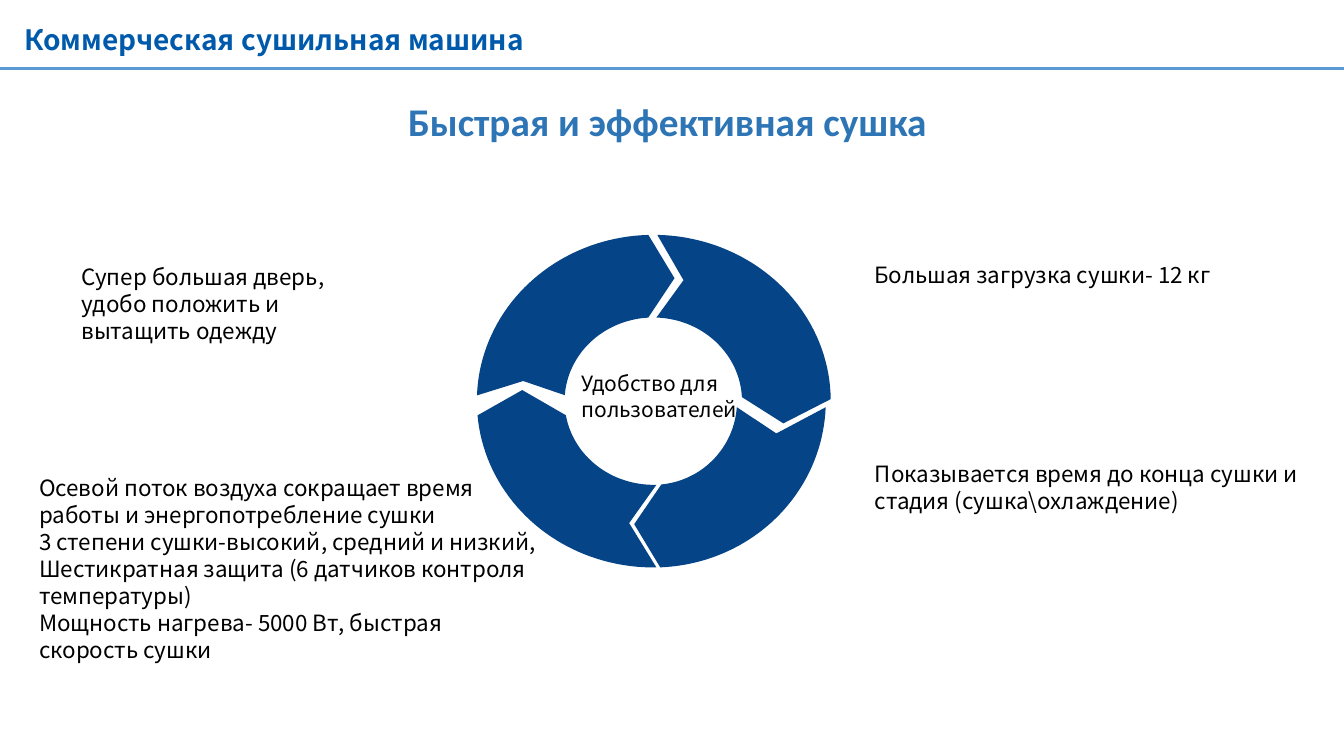
"""Build the slide on fast and efficient drying with its four-part ring."""
from math import cos, radians, sin

from lxml import etree
from pptx import Presentation
from pptx.dml.color import RGBColor
from pptx.enum.shapes import MSO_CONNECTOR as Connector
from pptx.enum.text import MSO_ANCHOR as Anchor
from pptx.oxml.ns import qn
from pptx.util import Inches, Pt

THEME = {
    "body_font": "Noto Sans CJK SC", "headline_font": "Calibri",
    "ink": "000000", "title": "005AAB", "headline": "2E75B6",
    "rule": "5B9BD5", "ring": "054487",
    "title_size": 20, "headline_size": 28, "body_size": 16, "hub_size": 15,
}

TITLE = "Коммерческая сушильная машина"
HEADLINE = "Быстрая и эффективная сушка"
HUB = "Удобство для пользователей"
BENEFITS = [
    ((8.57, 2.06, 4.21, 1.32), ["Большая загрузка сушки- 12 кг"]),
    ((0.29, 4.53, 5.2, 2.22), [
        "Осевой поток воздуха сокращает время работы и энергопотребление сушки",
        "3 степени сушки-высокий, средний и низкий,",
        "Шестикратная защита (6 датчиков контроля температуры)",
        "Мощность нагрева- 5000 Вт, быстрая скорость сушки",
    ]),
    ((0.71, 2.35, 3.24, 1.32),
     ["Супер большая дверь, удобо положить и вытащить одежду"]),
    ((8.58, 4.17, 4.73, 1.32),
     ["Показывается время до конца сушки и стадия (сушка\\охлаждение)"]),
]

RING_CENTRE = (6.48, 3.98)
OUTER_HEIGHT, INNER_HEIGHT = 1.65, 0.83
ARC_STEPS = 40
SEGMENTS = [
    {"radii": (1.76, 0.88), "outer": (-88.7, -0.7), "tip": (7.77, 4.2),
     "inner": (-2.8, -88), "notch": (6.78, 2.78)},
    {"radii": (1.75, 0.88), "outer": (182, 268.4), "tip": (6.69, 2.76),
     "inner": (266.7, 184.1), "notch": (5.19, 3.78)},
    {"radii": (1.75, 0.88), "outer": (89, 175.1), "tip": (5.18, 3.87),
     "inner": (170.3, 88), "notch": (6.24, 5.19)},
    {"radii": (1.71, 0.83), "outer": (2.1, 87.7), "tip": (6.29, 5.2),
     "inner": (84.5, 4.1), "notch": (7.7, 4.3)},
]


def color(part):
    return RGBColor.from_string(THEME[part])


def arc(width, height, span):
    start, end = span
    angles = [radians(start + (end - start) * step / ARC_STEPS)
              for step in range(ARC_STEPS + 1)]
    centre_x, centre_y = RING_CENTRE
    return [(centre_x + width * cos(a), centre_y + height * sin(a)) for a in angles]


def add_segment(ring, segment):
    outer_width, inner_width = segment["radii"]
    outline = (arc(outer_width, OUTER_HEIGHT, segment["outer"]) + [segment["tip"]]
               + arc(inner_width, INNER_HEIGHT, segment["inner"]) + [segment["notch"]])
    corners = [(Inches(x), Inches(y)) for x, y in outline]
    builder = ring.shapes.build_freeform(*corners[0])
    builder.add_line_segments(corners[1:], close=True)
    arrow = builder.convert_to_shape()
    arrow.shadow.inherit = False
    arrow.fill.solid()
    arrow.fill.fore_color.rgb = color("ring")
    arrow.line.fill.background()


def add_text(slide, place, lines, size, ink="ink", font="body_font", bold=False,
             anchor=Anchor.TOP, insets=(0.1, 0.05)):
    frame = slide.shapes.add_textbox(*map(Inches, place)).text_frame
    frame.word_wrap = True
    frame.vertical_anchor = anchor
    frame.margin_left = frame.margin_right = Inches(insets[0])
    frame.margin_top = frame.margin_bottom = Inches(insets[1])
    frame.text = "\n".join(lines)
    for paragraph in frame.paragraphs:
        for run in paragraph.runs:
            run.font.name = THEME[font]
            run.font.size = Pt(THEME[size])
            run.font.bold = bold
            run.font.color.rgb = color(ink)


def add_rule(slide, width):
    rule = slide.shapes.add_connector(
        Connector.STRAIGHT, 0, Inches(0.68), width, Inches(0.68))
    rule.line.color.rgb = color("rule")
    rule.line.width = Pt(2.25)
    etree.SubElement(rule._element.spPr, qn("a:effectLst"))


def main():
    deck = Presentation()
    deck.slide_width, deck.slide_height = Inches(13.33), Inches(7.5)
    slide = deck.slides.add_slide(deck.slide_layouts[6])
    add_rule(slide, deck.slide_width)
    ring = slide.shapes.add_group_shape()
    for segment in SEGMENTS:
        add_segment(ring, segment)
    add_text(slide, (5.69, 3.64, 1.96, 0.58), [HUB], "hub_size", insets=(0.08, 0.04))
    for place, lines in BENEFITS:
        add_text(slide, place, lines, "body_size", anchor=Anchor.MIDDLE)
    add_text(slide, (3.95, 0.92, 8.22, 0.57), [HEADLINE], "headline_size",
             ink="headline", font="headline_font", bold=True)
    add_text(slide, (0.14, 0.17, 8.69, 0.44), [TITLE], "title_size",
             ink="title", bold=True)
    deck.save("out.pptx")


if __name__ == "__main__":
    main()
